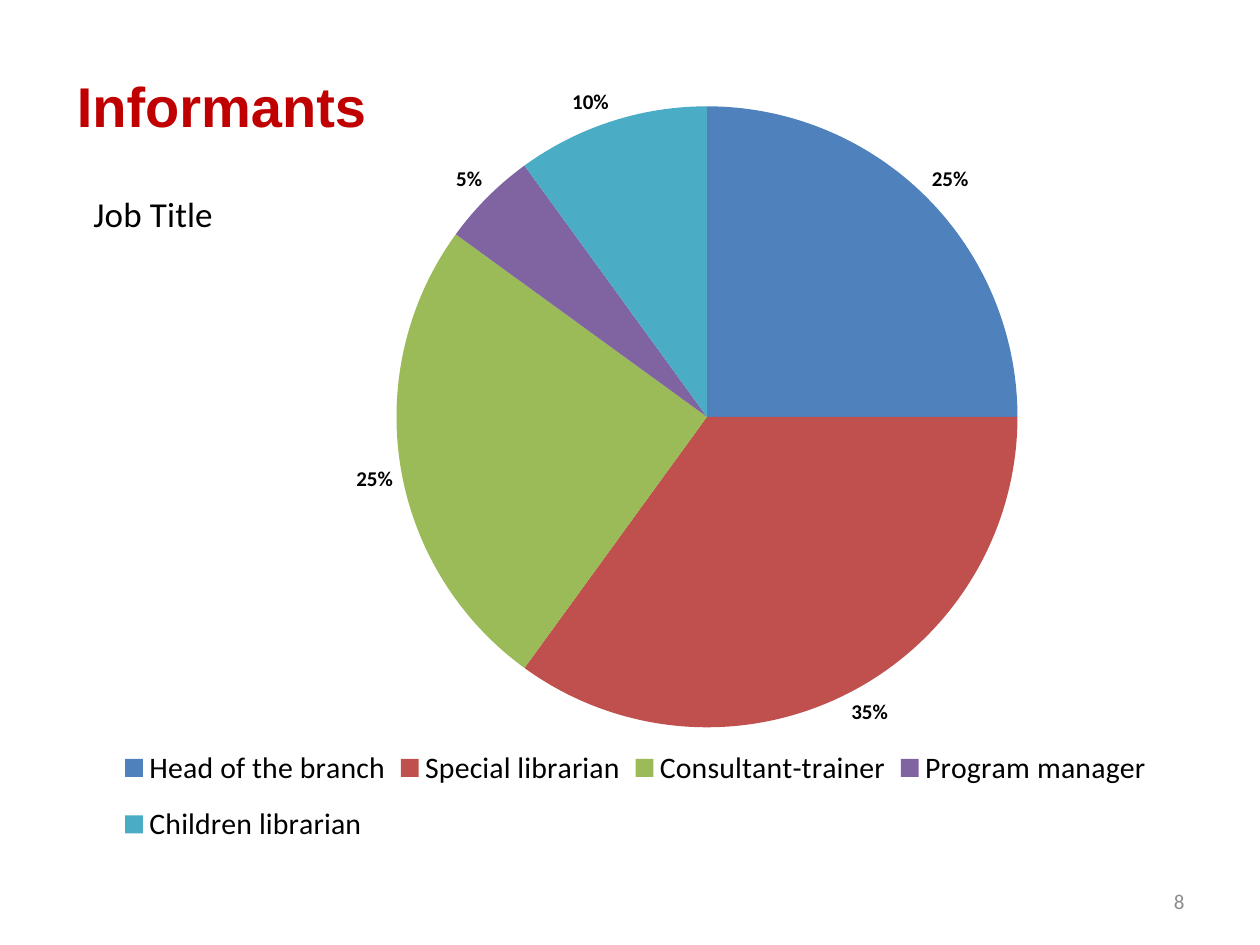
from lxml.etree import SubElement
from pptx import Presentation
from pptx.chart.data import CategoryChartData
from pptx.dml.color import RGBColor
from pptx.enum.chart import XL_CHART_TYPE, XL_LABEL_POSITION, XL_LEGEND_POSITION
from pptx.enum.text import MSO_ANCHOR, PP_ALIGN
from pptx.oxml.ns import qn
from pptx.util import Pt

RED = RGBColor(0xC0, 0x00, 0x00)
GREY = RGBColor(0x8C, 0x8C, 0x8C)
BLACK = RGBColor(0x00, 0x00, 0x00)
JOBS = [
    ("Head of the branch", 25, RGBColor(0x4F, 0x81, 0xBD)),
    ("Special librarian", 35, RGBColor(0xC0, 0x50, 0x4D)),
    ("Consultant-trainer", 25, RGBColor(0x9B, 0xBB, 0x59)),
    ("Program manager", 5, RGBColor(0x80, 0x64, 0xA2)),
    ("Children librarian", 10, RGBColor(0x4B, 0xAC, 0xC6)),
]


def place(part, index, inner=False, **box):
    """Set a manual layout, in fractions of the chart, on a chart part."""
    for old in part.findall(qn("c:layout")):
        part.remove(old)
    layout = SubElement(part, qn("c:layout"))
    part.insert(index, layout)
    manual = SubElement(layout, qn("c:manualLayout"))
    if inner:
        SubElement(manual, qn("c:layoutTarget"), val="inner")
    for key in ("x", "y"):
        SubElement(manual, qn(f"c:{key}Mode"), val="edge")
    for key, value in box.items():
        SubElement(manual, qn(f"c:{key}"), val=str(value))


def style(font, size, color, name="Calibri", bold=False):
    font.size, font.name, font.bold = Pt(size), name, bold
    font.color.rgb = color


def add_pie(slide):
    data = CategoryChartData()
    data.categories = [job for job, _, _ in JOBS]
    data.add_series("Series 1", [share for _, share, _ in JOBS])
    chart = slide.shapes.add_chart(
        XL_CHART_TYPE.PIE, Pt(36.7), Pt(23.8), Pt(653), Pt(473.8), data).chart
    style(chart.font, 10, BLACK)

    head = chart.chart_title.text_frame
    head.text = "Job Title"
    style(head.paragraphs[0].runs[0].font, 20, BLACK)
    chart.chart_title.include_in_layout = False
    place(head._txBody.getparent().getparent(), 1, x=0.02, y=0.17)

    chart.has_legend = True
    legend = chart.legend
    legend.position = XL_LEGEND_POSITION.RIGHT
    legend.include_in_layout = False
    style(legend.font, 17, BLACK)
    place(legend._element, 1, x=0.04, y=0.83, w=0.92, h=0.16)

    plot = chart.plots[0]
    plot.vary_by_categories = True
    place(plot._element.getparent(), 0, inner=True,
          x=0.218, y=0.078, w=0.689, h=0.749)
    for i, (_, _, color) in enumerate(JOBS):
        fill = plot.series[0].points[i].format.fill
        fill.solid()
        fill.fore_color.rgb = color

    plot.has_data_labels = True
    labels = plot.data_labels
    labels.show_percentage, labels.show_value = True, False
    labels.number_format, labels.number_format_is_linked = "0%", False
    labels.position = XL_LABEL_POSITION.OUTSIDE_END
    style(labels.font, 12, BLACK, bold=True)


def set_text(shape, text, anchor, align, **look):
    frame = shape.text_frame
    frame.text = text
    frame.word_wrap = True
    frame.vertical_anchor = anchor
    frame.paragraphs[0].alignment = align
    style(frame.paragraphs[0].runs[0].font, **look)


def main():
    deck = Presentation()
    deck.slide_width, deck.slide_height = Pt(720), Pt(540)
    slide = deck.slides.add_slide(deck.slide_layouts[5])
    add_pie(slide)

    title = slide.shapes.title
    title.left, title.top, title.width, title.height = (
        Pt(36.7), Pt(37.4), Pt(260.6), Pt(46))
    set_text(title, "Informants", MSO_ANCHOR.TOP, PP_ALIGN.LEFT,
             size=32, color=RED, name="Arial", bold=True)
    slide.shapes._spTree.append(title._element)  # in front of the chart

    number = slide.shapes.add_textbox(Pt(516), Pt(500.5), Pt(168), Pt(28.8))
    set_text(number, "8", MSO_ANCHOR.MIDDLE, PP_ALIGN.RIGHT,
             size=12, color=GREY)
    deck.save("out.pptx")


if __name__ == "__main__":
    main()
